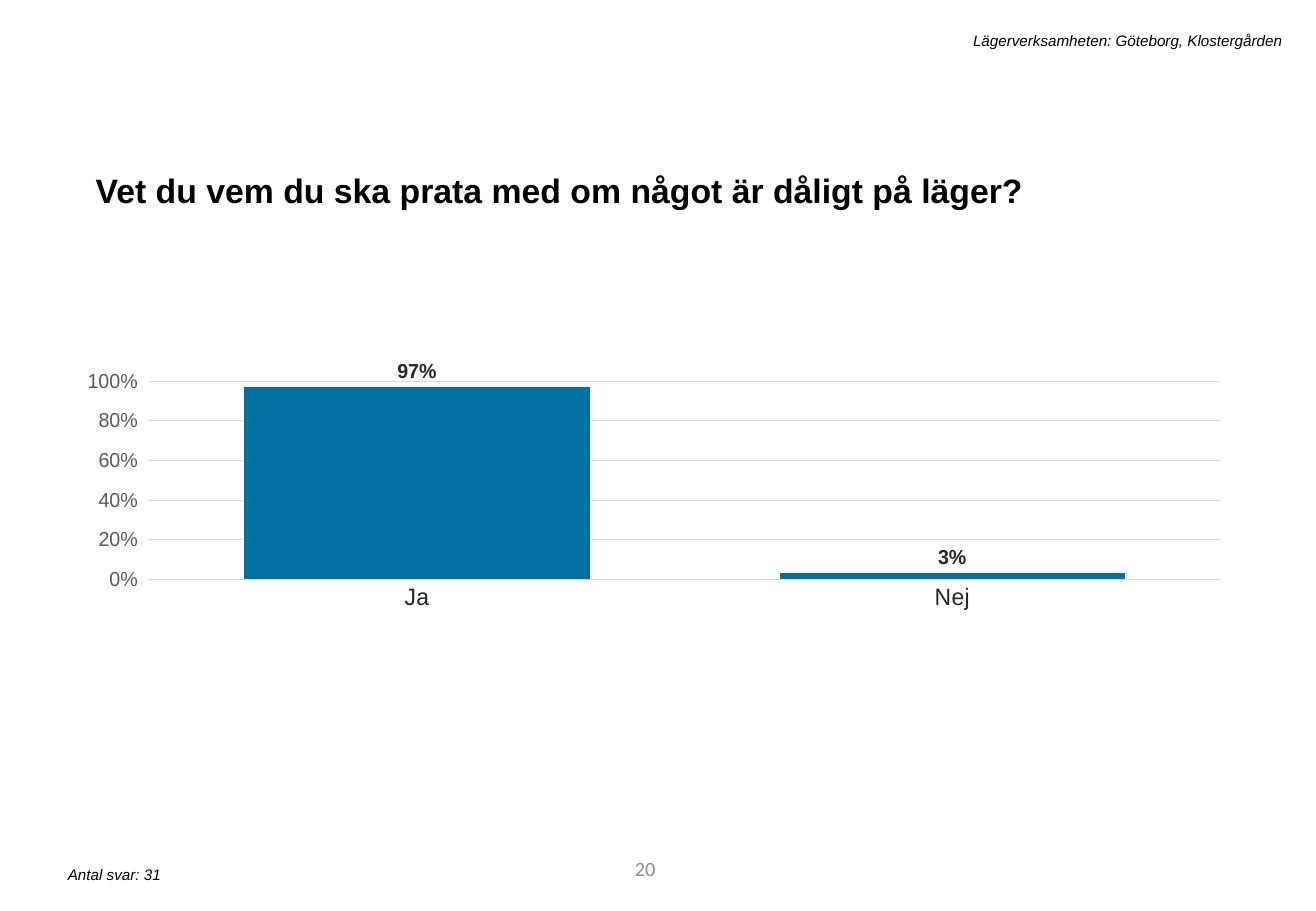
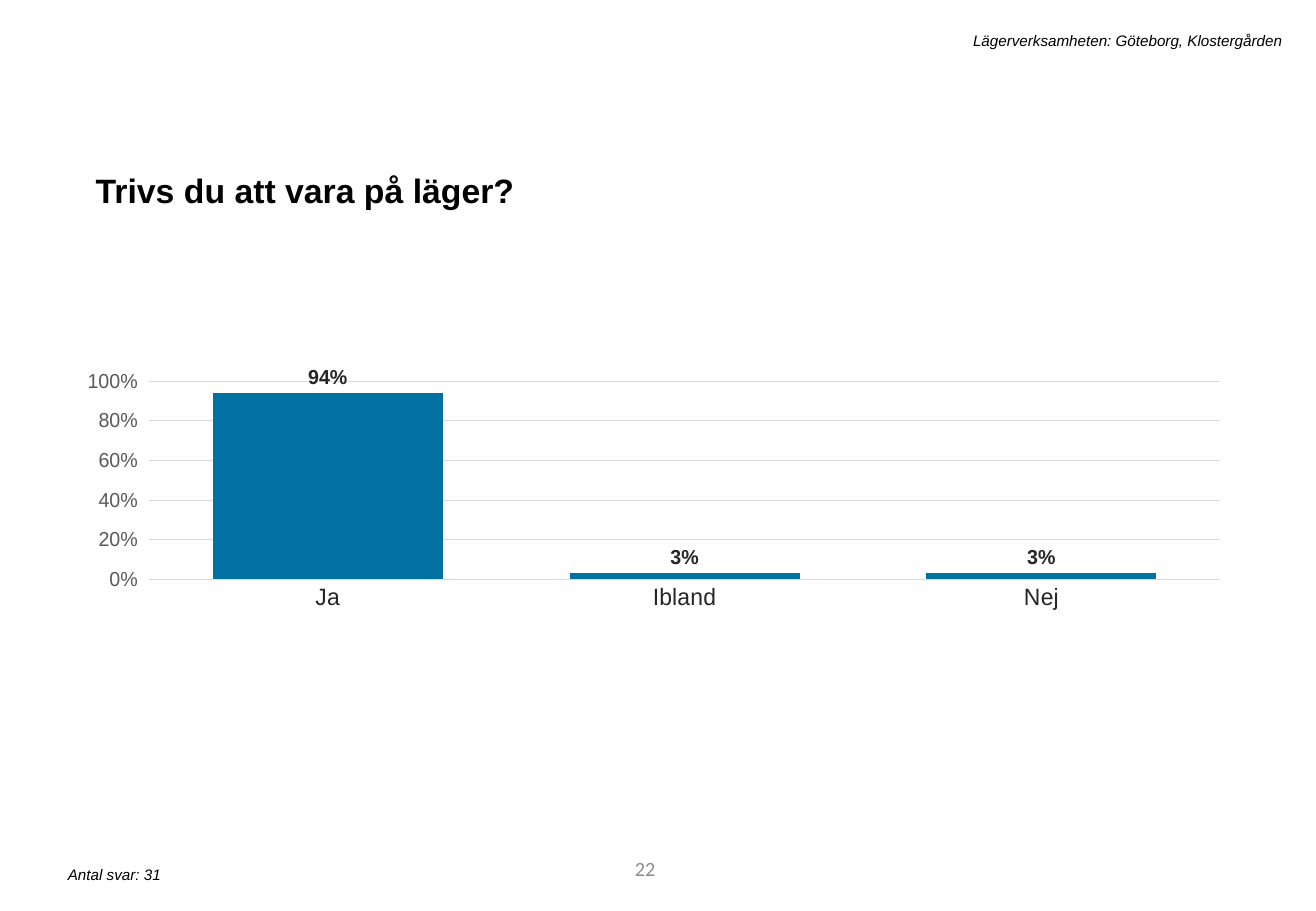
from dataclasses import dataclass

from lxml.etree import SubElement
from pptx import Presentation
from pptx.chart.data import CategoryChartData
from pptx.dml.color import RGBColor
from pptx.enum.chart import XL_CHART_TYPE, XL_LABEL_POSITION, XL_TICK_MARK
from pptx.enum.text import MSO_ANCHOR, PP_ALIGN
from pptx.oxml.ns import qn
from pptx.util import Cm, Pt

BLACK = RGBColor(0x00, 0x00, 0x00)
DARK_GREY = RGBColor(0x26, 0x26, 0x26)
AXIS_GREY = RGBColor(0x59, 0x59, 0x59)
PAGE_GREY = RGBColor(0x8C, 0x8C, 0x8C)
GRID_GREY = RGBColor(0xD9, 0xD9, 0xD9)
BAR_BLUE = RGBColor(0x00, 0x71, 0xA1)

HEADER = "Lägerverksamheten: Göteborg, Klostergården"
PLOT_LAYOUT = {"x": 0.025, "y": 0.154, "w": 0.966, "h": 0.413}


@dataclass(frozen=True)
class TextStyle:
    """Place in centimetres, font and paragraph format of one kind of text."""
    place: tuple[float, float, float, float]
    font: dict
    paragraph: dict
    anchor: MSO_ANCHOR = MSO_ANCHOR.TOP


@dataclass(frozen=True)
class Question:
    page_number: int
    title: str
    answer_count: int
    shares: dict[str, float]


NOTE_FONT = {"name": "Arial", "size": Pt(9), "italic": True, "color": BLACK}
RIGHT = {"alignment": PP_ALIGN.RIGHT}

HEADER_STYLE = TextStyle((4.55, 0.53, 22.5, 0.64), NOTE_FONT, RIGHT)
COUNT_STYLE = TextStyle((1.17, 17.98, 11.2, 0.64), NOTE_FONT, {})
PAGE_STYLE = TextStyle(
    (7.75, 17.65, 6.2, 1.02),
    {"name": "Calibri", "size": Pt(12), "color": PAGE_GREY},
    RIGHT, MSO_ANCHOR.MIDDLE)
TITLE_STYLE = TextStyle(
    (1.75, 3.25, 23.88, 1.19),
    {"name": "Arial", "size": Pt(20), "bold": True, "color": BLACK},
    {"line_spacing": 1.2, "space_before": Pt(10)})

QUESTIONS = [
    Question(20, "Vet du vem du ska prata med om något är dåligt på läger?", 31,
             {"Ja": 0.97, "Nej": 0.03}),
    Question(22, "Trivs du att vara på läger?", 31,
             {"Ja": 0.94, "Ibland": 0.03, "Nej": 0.03}),
]


def apply_format(target, values: dict) -> None:
    for name, value in values.items():
        if name == "color":
            target.color.rgb = value
        else:
            setattr(target, name, value)


def add_text(page, text: str, style: TextStyle) -> None:
    box = page.shapes.add_textbox(*map(Cm, style.place))
    apply_format(box.text_frame,
                 {"word_wrap": True, "vertical_anchor": style.anchor})
    para = box.text_frame.paragraphs[0]
    apply_format(para, style.paragraph)
    span = para.add_run()
    span.text = text
    apply_format(span.font, style.font)


def set_plot_layout(chart) -> None:
    """Fix the inner plot area as fractions of the chart."""
    plot_area = chart.plots[0]._element.getparent()
    layout = plot_area.find(qn("c:layout"))
    if layout is None:
        layout = SubElement(plot_area, qn("c:layout"))
        plot_area.insert(0, layout)
    manual = SubElement(layout, qn("c:manualLayout"))
    settings = {"layoutTarget": "inner", "xMode": "edge", "yMode": "edge",
                **PLOT_LAYOUT}
    for name, value in settings.items():
        SubElement(manual, qn(f"c:{name}")).set("val", str(value))


def add_share_chart(page, shares: dict[str, float]) -> None:
    data = CategoryChartData(number_format="0%")
    data.categories = list(shares)
    data.add_series("Series 1", list(shares.values()))
    chart = page.shapes.add_chart(
        XL_CHART_TYPE.COLUMN_CLUSTERED,
        Cm(1.83), Cm(6.43), Cm(23.88), Cm(10.03), data).chart
    apply_format(chart, {"has_legend": False, "has_title": False})
    apply_format(chart.font, {"name": "Arial", "size": Pt(10), "color": BLACK})
    set_plot_layout(chart)

    # Columns and their labels
    plot = chart.plots[0]
    apply_format(plot, {"gap_width": 55, "vary_by_categories": False})
    series = plot.series[0]
    series.format.fill.solid()
    series.format.fill.fore_color.rgb = BAR_BLUE
    labels = series.data_labels
    apply_format(labels, {
        "show_value": True, "position": XL_LABEL_POSITION.OUTSIDE_END,
        "number_format": "0%", "number_format_is_linked": False})
    apply_format(labels.font, {"name": "Arial", "size": Pt(12), "bold": True,
                               "color": DARK_GREY})

    # Axes and gridlines
    answers, percent = chart.category_axis, chart.value_axis
    answers.major_tick_mark = XL_TICK_MARK.NONE
    apply_format(answers.tick_labels.font,
                 {"name": "Arial", "size": Pt(14), "color": DARK_GREY})
    apply_format(percent, {
        "minimum_scale": 0, "maximum_scale": 1, "major_unit": 0.2,
        "major_tick_mark": XL_TICK_MARK.OUTSIDE, "has_major_gridlines": True})
    apply_format(percent.tick_labels,
                 {"number_format": "0%", "number_format_is_linked": False})
    apply_format(percent.tick_labels.font,
                 {"name": "Arial", "size": Pt(12), "color": AXIS_GREY})
    percent.format.line.fill.background()
    for part in (answers, percent.major_gridlines):
        apply_format(part.format.line, {"color": GRID_GREY, "width": Pt(0.75)})


def add_question_page(deck, question: Question) -> None:
    page = deck.slides.add_slide(deck.slide_layouts[6])
    add_text(page, str(question.page_number), PAGE_STYLE)
    add_text(page, question.title, TITLE_STYLE)
    add_text(page, f"Antal svar: {question.answer_count}", COUNT_STYLE)
    add_share_chart(page, question.shares)
    add_text(page, HEADER, HEADER_STYLE)


def main() -> None:
    deck = Presentation()
    apply_format(deck, {"slide_width": Cm(27.51), "slide_height": Cm(19.05)})
    for question in QUESTIONS:
        add_question_page(deck, question)
    deck.save("out.pptx")


if __name__ == "__main__":
    main()
